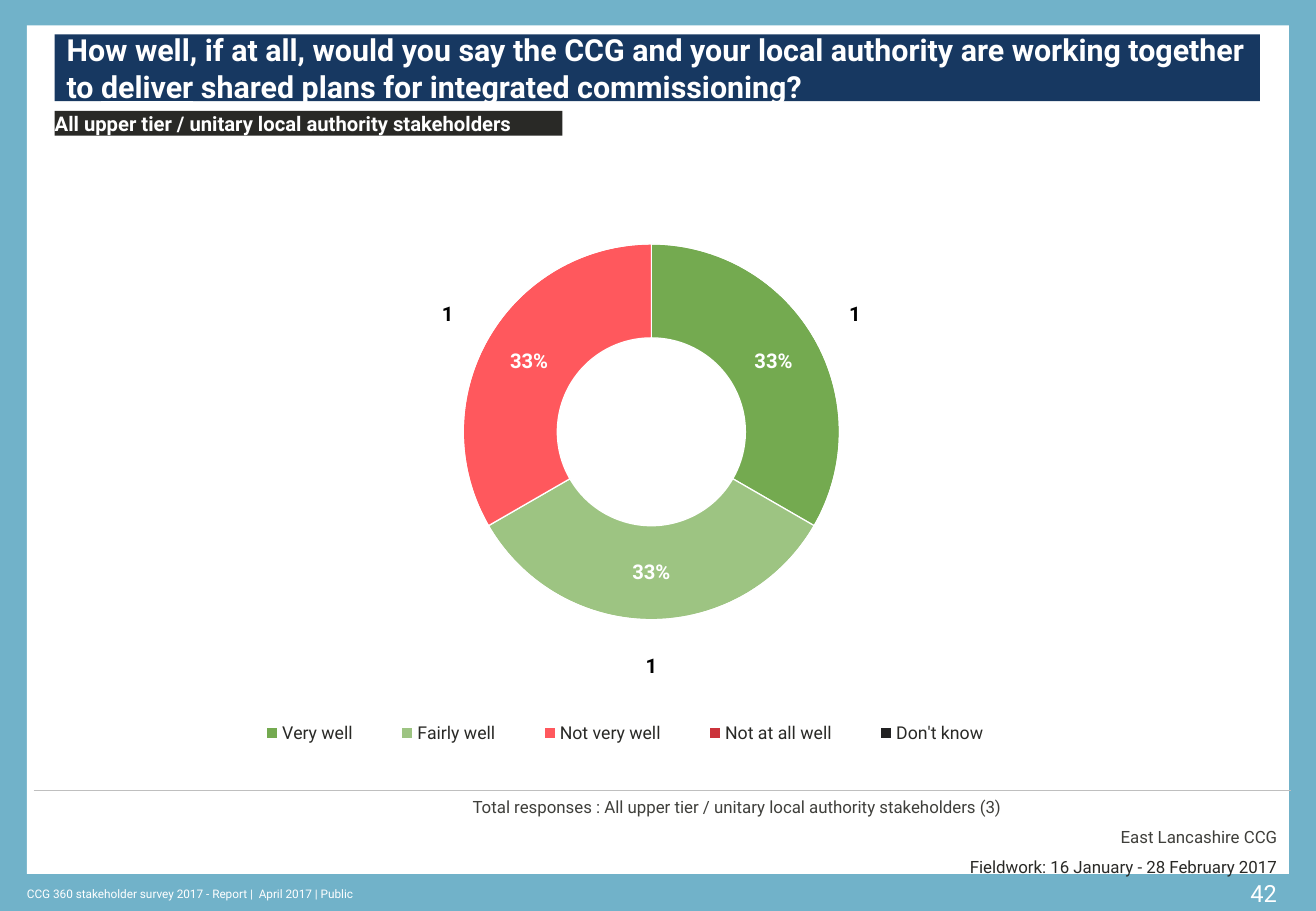
from dataclasses import dataclass
from typing import Optional

from pptx import Presentation
from pptx import util as u
from pptx.chart.data import CategoryChartData
from pptx.dml.color import RGBColor
from pptx.enum import chart as charts, shapes, text
from pptx.oxml import parse_xml
from pptx.oxml.ns import nsdecls, qn


@dataclass(frozen=True)
class Theme:
    font: str = "Roboto"
    frame: str = "71B2C9"
    white: str = "FFFFFF"
    navy: str = "173861"
    dark: str = "292926"
    grey: str = "3F3F3B"
    black: str = "000000"
    rule: str = "BFBFBF"
    title: float = 18
    page: float = 14
    label: float = 12
    legend: float = 10.5
    note: float = 10
    footer: float = 7


THEME = Theme()


@dataclass(frozen=True)
class Box:
    left: float
    top: float
    width: float
    height: float

    def lengths(self) -> tuple:
        return tuple(u.Pt(n) for n in (self.left, self.top, self.width, self.height))


@dataclass(frozen=True)
class Run:
    words: str
    underline: bool = False


@dataclass(frozen=True)
class Line:
    runs: tuple
    align: text.PP_ALIGN = text.PP_ALIGN.LEFT
    before: float = 0


@dataclass(frozen=True)
class Block:
    box: Box
    lines: tuple
    size: float
    color: str = THEME.white
    fill: Optional[str] = None
    bold: bool = False
    padded: bool = True
    wrap: bool = True
    anchor: text.MSO_ANCHOR = text.MSO_ANCHOR.TOP


@dataclass(frozen=True)
class Answer:
    name: str
    percent: int
    count: int
    color: str


@dataclass(frozen=True)
class Ring:
    number_format: str
    label_color: str
    filled: bool


RIGHT, MIDDLE = text.PP_ALIGN.RIGHT, text.MSO_ANCHOR.MIDDLE

BLOCKS = (
    Block(Box(732, 517.5, 32, 24.5), (Line((Run("42"),), RIGHT),), THEME.page, wrap=False),
    Block(Box(16, 522.5, 385, 14.5),
          (Line((Run("CCG 360 stakeholder survey 2017 - Report |  April 2017 | Public"),)),),
          THEME.footer, padded=False, wrap=False, anchor=MIDDLE),
    Block(Box(32.4, 20.4, 714.4, 39.6),
          (Line((Run("How well, if at all, would you say the CCG and your local authority "
                     "are working together to "),
                 Run("deliver", underline=True),
                 Run(" shared plans for integrated commissioning?"))),),
          THEME.title, fill=THEME.navy, bold=True, anchor=MIDDLE),
    Block(Box(32.4, 65.8, 301, 14.6),
          (Line((Run("All upper tier / unitary local authority stakeholders"),)),),
          THEME.label, fill=THEME.dark, bold=True, padded=False),
    Block(Box(273, 468.7, 491, 27.5),
          (Line((Run("Total responses : All upper tier / unitary local authority stakeholders (3)"),)),
           Line((Run("East Lancashire CCG"),), RIGHT, before=6)),
          THEME.note, color=THEME.grey),
    Block(Box(548.6, 507.6, 208.1, 12.2),
          (Line((Run("Fieldwork: 16 January - 28 February 2017"),), RIGHT),),
          THEME.note, color=THEME.dark, padded=False),
)

ANSWERS = (
    Answer("Very well", 33, 1, "74AA50"),
    Answer("Fairly well", 33, 1, "9DC482"),
    Answer("Not very well", 33, 1, "FF585D"),
    Answer("Not at all well", 0, 0, "CB333B"),
    Answer("Don't know", 0, 0, "222223"),
)
# Number formats leave the labels of zero answers empty.
RINGS = (
    Ring('0"%";;', THEME.white, filled=True),
    Ring("0;;", THEME.black, filled=False),
)


def set_font(font, size: float, color: str, bold: bool = False) -> None:
    font.name, font.size, font.bold = THEME.font, u.Pt(size), bold
    font.color.rgb = RGBColor.from_string(color)


def add_panel(slide, box: Box, fill: str):
    panel = slide.shapes.add_shape(shapes.MSO_SHAPE.RECTANGLE, *box.lengths())
    panel.shadow.inherit = False
    panel.fill.solid()
    panel.fill.fore_color.rgb = RGBColor.from_string(fill)
    panel.line.fill.background()
    return panel


def add_block(slide, block: Block) -> None:
    if block.fill:
        holder = add_panel(slide, block.box, block.fill)
    else:
        holder = slide.shapes.add_textbox(*block.box.lengths())
    frame = holder.text_frame
    frame.word_wrap, frame.vertical_anchor = block.wrap, block.anchor
    if not block.padded:
        frame.margin_left = frame.margin_right = frame.margin_top = frame.margin_bottom = 0
    for index, line in enumerate(block.lines):
        paragraph = frame.add_paragraph() if index else frame.paragraphs[0]
        paragraph.alignment = line.align
        if line.before:
            paragraph.space_before = u.Pt(line.before)
        for part in line.runs:
            run = paragraph.add_run()
            run.text = part.words
            set_font(run.font, block.size, block.color, block.bold)
            run.font.underline = part.underline


def add_rule(slide, left: float, right: float, y: float) -> None:
    rule = slide.shapes.add_connector(
        shapes.MSO_CONNECTOR.STRAIGHT, u.Pt(left), u.Pt(y), u.Pt(right), u.Pt(y))
    rule.line.color.rgb = RGBColor.from_string(THEME.rule)
    rule.line.width = u.Pt(0.25)
    rule._element.spPr.append(parse_xml(f"<a:effectLst {nsdecls('a')}/>"))


def place_part(part, index: int, area: Box, target: str = "") -> None:
    """Fix a chart part's position, given as fractions of the chart."""
    for old in part.findall(qn("c:layout")):
        part.remove(old)
    inner = f'<c:layoutTarget val="{target}"/>' if target else ""
    part.insert(index, parse_xml(
        f'<c:layout {nsdecls("c")}><c:manualLayout>{inner}'
        '<c:xMode val="edge"/><c:yMode val="edge"/>'
        f'<c:x val="{area.left}"/><c:y val="{area.top}"/>'
        f'<c:w val="{area.width}"/><c:h val="{area.height}"/>'
        '</c:manualLayout></c:layout>'))


def style_ring(series, ring: Ring) -> None:
    for index, answer in enumerate(ANSWERS):
        wedge = series.points[index].format
        if ring.filled:
            wedge.fill.solid()
            wedge.fill.fore_color.rgb = RGBColor.from_string(answer.color)
        else:
            wedge.fill.background()
        wedge.line.color.rgb = RGBColor.from_string(THEME.white)
        wedge.line.width = u.Pt(0.75)
    labels = series.data_labels
    labels.show_value = True
    labels.number_format, labels.number_format_is_linked = ring.number_format, False
    set_font(labels.font, THEME.label, ring.label_color, bold=True)


def add_doughnut(slide, box: Box) -> None:
    data = CategoryChartData()
    data.categories = [answer.name for answer in ANSWERS]
    data.add_series("Series 1", [answer.percent for answer in ANSWERS])
    data.add_series("Series 2", [answer.count for answer in ANSWERS])
    chart = slide.shapes.add_chart(
        charts.XL_CHART_TYPE.DOUGHNUT, *box.lengths(), data).chart
    set_font(chart.font, THEME.label, THEME.dark)
    chart.has_title = False
    chart.has_legend = True
    legend = chart.legend
    legend.position = charts.XL_LEGEND_POSITION.BOTTOM
    legend.include_in_layout = False
    set_font(legend.font, THEME.legend, THEME.dark)
    place_part(legend._element, 1, Box(0.17, 0.87, 0.61, 0.08))

    plot = chart.plots[0]
    plot.vary_by_categories = True
    for series, ring in zip(plot.series, RINGS):
        style_ring(series, ring)
    doughnut = plot._element
    doughnut.find(qn("c:holeSize")).set("val", "38")
    place_part(doughnut.getparent(), 0, Box(0.28, 0, 0.43, 0.88), "inner")


def main() -> None:
    deck = Presentation()
    deck.slide_width, deck.slide_height = u.Pt(780), u.Pt(540)
    slide = deck.slides.add_slide(deck.slide_layouts[6])
    slide.background.fill.solid()
    slide.background.fill.fore_color.rgb = RGBColor.from_string(THEME.frame)
    add_panel(slide, Box(16, 15, 748, 503), THEME.white)
    add_rule(slide, 20, 765, 468.7)
    add_doughnut(slide, Box(0, 88.5, 780, 380.2))
    for block in BLOCKS:
        add_block(slide, block)
    deck.save("out.pptx")


if __name__ == "__main__":
    main()
